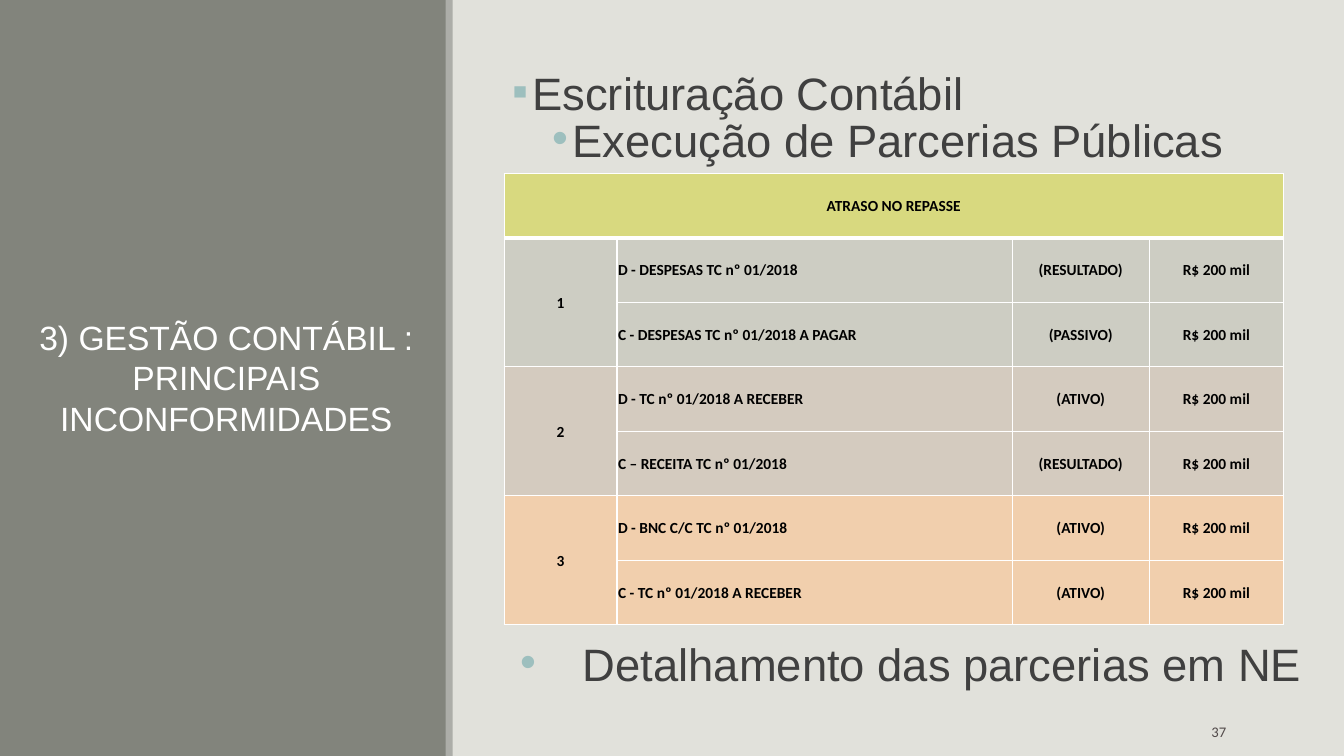
"""Build the slide on accounting management and late transfer entries."""
from dataclasses import dataclass

from lxml import etree
from pptx import Presentation
from pptx.dml.color import RGBColor as RGB
from pptx.enum.shapes import MSO_SHAPE as SHAPE
from pptx.enum.text import MSO_ANCHOR as ANCHOR, PP_ALIGN as ALIGN
from pptx.oxml.ns import qn
from pptx.util import Inches, Pt


@dataclass(frozen=True)
class Theme:
    background: str = "E1E1DB"
    panel: str = "82847C"
    stripe: str = "ACADA8"
    white: str = "FFFFFF"
    body: str = "404040"
    bullet: str = "9DBFBE"
    number: str = "514949"
    black: str = "000000"
    header: str = "D8D97F"
    groups: tuple = ("CDCDC3", "D4CBBF", "F1CFAD")
    title_size: float = 24
    body_size: float = 32.4
    number_size: float = 10.5
    cell_size: float = 11
    heading_font: str = "Arial"
    detail_font: str = "Calibri"


theme = Theme()


def write(tf, text, size, color, font=theme.heading_font, bold=False, align=ALIGN.LEFT,
          first=True, bullet=None, margin=0, hang=0, spacing=None, after=0):
    p = tf.paragraphs[0] if first else tf.add_paragraph()
    p.alignment, p.space_after = align, Pt(after)
    if spacing:
        p.line_spacing = spacing
    if bullet:
        pPr = p._p.get_or_add_pPr()
        pPr.set("marL", str(Inches(margin)))
        pPr.set("indent", str(Inches(-hang)))
        bu_clr = etree.SubElement(pPr, qn("a:buClr"))
        etree.SubElement(bu_clr, qn("a:srgbClr"), val=theme.bullet)
        etree.SubElement(pPr, qn("a:buFont"), typeface="Arial")
        etree.SubElement(pPr, qn("a:buChar"), char=bullet)
    r = p.add_run()
    r.text = text
    r.font.size, r.font.name, r.font.bold = Pt(size), font, bold
    r.font.color.rgb = RGB.from_string(color)


def add_box(left, top, width, height, anchor=ANCHOR.MIDDLE, side=0.1):
    tf = s.shapes.add_textbox(Inches(left), Inches(top), Inches(width), Inches(height)).text_frame
    tf.word_wrap, tf.vertical_anchor = True, anchor
    tf.margin_left = tf.margin_right = Inches(side)
    return tf


prs = Presentation()
prs.slide_width, prs.slide_height = Inches(13.33), Inches(7.5)
s = prs.slides.add_slide(prs.slide_layouts[6])
s.background.fill.solid()
s.background.fill.fore_color.rgb = RGB.from_string(theme.background)

for left, width, color in [(0, 4.43, theme.panel), (4.42, 0.07, theme.stripe)]:
    sp = s.shapes.add_shape(SHAPE.RECTANGLE, Inches(left), 0, Inches(width), prs.slide_height)
    sp.shadow.inherit = False
    sp.fill.solid()
    sp.fill.fore_color.rgb = RGB.from_string(color)
    sp.line.fill.background()

write(add_box(0.27, 0.66, 3.95, 6.17), "3) GESTÃO CONTÁBIL : PRINCIPAIS INCONFORMIDADES",
      theme.title_size, theme.white, align=ALIGN.CENTER)

body_format = dict(size=theme.body_size, color=theme.body, align=ALIGN.JUSTIFY, spacing=0.7, after=6.8)
topics = add_box(4.86, 0.74, 8.07, 0.95, ANCHOR.TOP, side=0)
write(topics, "Escrituração Contábil", bullet="▪", margin=0.42, hang=0.2, **body_format)
write(topics, "Execução de Parcerias Públicas", first=False, bullet="•", margin=0.82, hang=0.2,
      **body_format)
closing = add_box(4.86, 6.41, 8.07, 0.5, ANCHOR.TOP, side=0)
write(closing, "Detalhamento das parcerias em NE", bullet="•", margin=0.92, hang=0.62, **body_format)

write(add_box(11.07, 7.06, 1.19, 0.4), "37", theme.number_size, theme.number,
      font=theme.detail_font, align=ALIGN.RIGHT)

amount = "R$ 200 mil"
rows = [
    ("ATRASO NO REPASSE", "", "", ""),
    ("1", "D - DESPESAS TC nº 01/2018", "(RESULTADO)", amount),
    ("", "C - DESPESAS TC nº 01/2018 A PAGAR", "(PASSIVO)", amount),
    ("2", "D - TC nº 01/2018 A RECEBER", "(ATIVO)", amount),
    ("", "C – RECEITA TC nº 01/2018", "(RESULTADO)", amount),
    ("3", "D - BNC C/C TC nº 01/2018", "(ATIVO)", amount),
    ("", "C - TC nº 01/2018 A RECEBER", "(ATIVO)", amount),
]
table = s.shapes.add_table(len(rows), 4, Inches(5), Inches(1.72), Inches(7.73), Inches(4.48)).table
table.first_row = table.horz_banding = False
for column, width in zip(table.columns, (1.12, 3.92, 1.36, 1.33)):
    column.width = Inches(width)

for i, texts in enumerate(rows):
    table.rows[i].height = Inches(0.64)
    fill = theme.groups[(i - 1) // 2] if i else theme.header
    for j, text in enumerate(texts):
        cell = table.cell(i, j)
        cell.vertical_anchor = ANCHOR.MIDDLE
        cell.margin_left = cell.margin_top = cell.margin_right = Inches(0.01)
        cell.margin_bottom = 0
        tcPr = cell._tc.get_or_add_tcPr()
        for side in "LRTB":
            thick = (i, side) in [(0, "B"), (1, "T")]
            ln = etree.SubElement(tcPr, qn(f"a:ln{side}"), w=str(Pt(3 if thick else 1)))
            line_fill = etree.SubElement(ln, qn("a:solidFill"))
            etree.SubElement(line_fill, qn("a:srgbClr"), val=theme.white)
        cell.fill.solid()
        cell.fill.fore_color.rgb = RGB.from_string(fill)
        if text:
            write(cell.text_frame, text, theme.cell_size, theme.black, font=theme.detail_font,
                  bold=True, align=ALIGN.LEFT if j == 1 else ALIGN.CENTER)

table.cell(0, 0).merge(table.cell(0, 3))
for i in (1, 3, 5):
    table.cell(i, 0).merge(table.cell(i + 1, 0))

prs.save("out.pptx")
